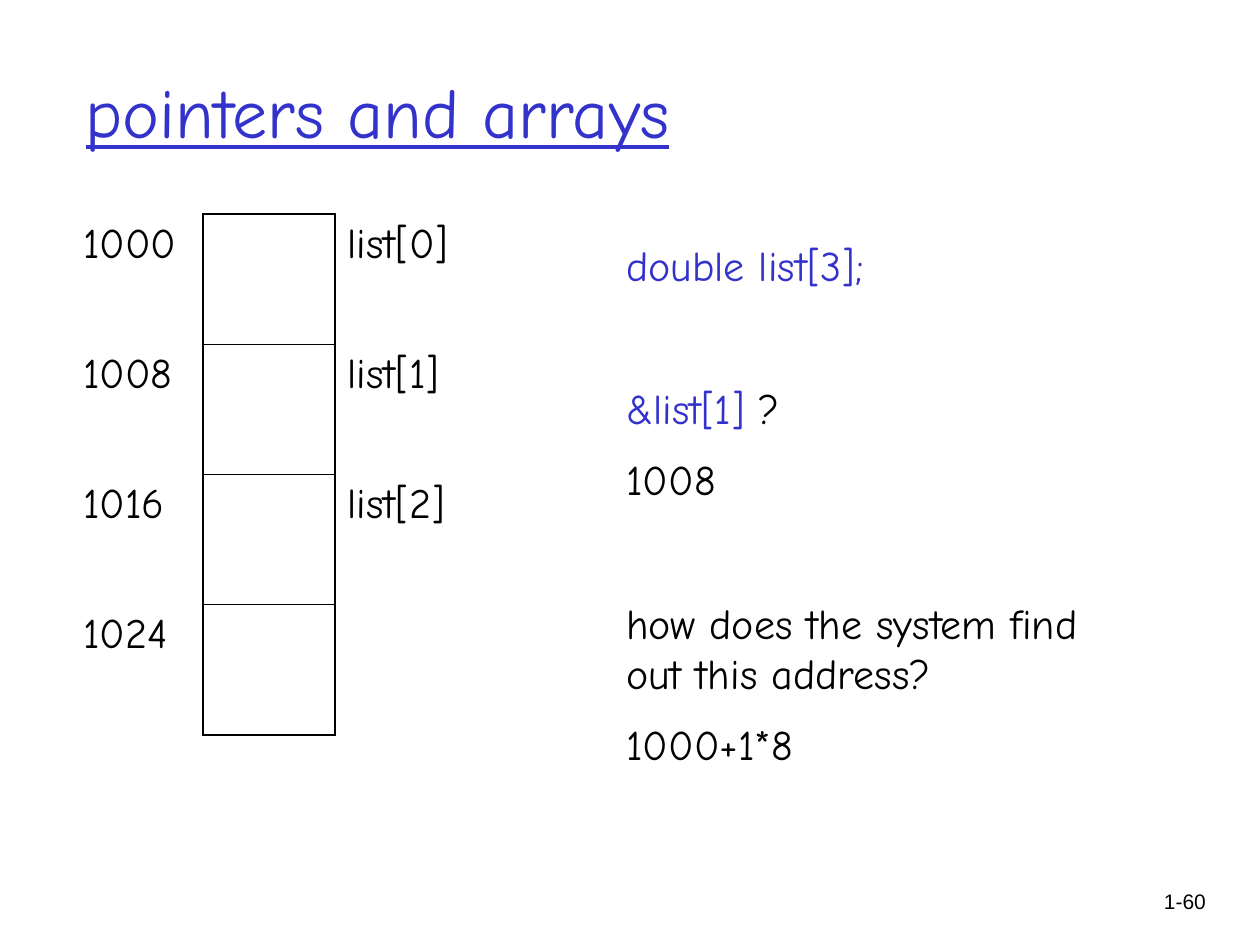
import dataclasses
import typing

import lxml.etree
import pptx
import pptx.dml.color
import pptx.enum.text
import pptx.oxml.ns
import pptx.util

Pt = pptx.util.Pt
Color = pptx.dml.color.RGBColor
Align = pptx.enum.text.PP_ALIGN
Anchor = pptx.enum.text.MSO_ANCHOR


@dataclasses.dataclass(frozen=True)
class Theme:
    """Fonts, type sizes, colours and line width of the slide."""

    font: str = "Comic Neue"
    number_font: str = "Arial"
    title_size: float = 40
    text_size: float = 24
    number_size: float = 12
    accent: str = "3333CC"
    ink: str = "000000"
    border_width: float = 1


@dataclasses.dataclass(frozen=True)
class Box:
    """Position and size in points."""

    left: float
    top: float
    width: float
    height: float

    def lengths(self) -> tuple:
        """Return the four values as lengths."""
        return Pt(self.left), Pt(self.top), Pt(self.width), Pt(self.height)


@dataclasses.dataclass(frozen=True)
class Run:
    """A piece of text in one colour."""

    text: str
    color: str


@dataclasses.dataclass(frozen=True)
class Line:
    """A paragraph of runs and the space above it."""

    runs: tuple[Run, ...]
    space_before: float


@dataclasses.dataclass(frozen=True)
class MemoryCell:
    """An address and the array element stored there."""

    address: str
    element: str


THEME = Theme()
LINE_GAP = 12
TOPIC_GAP = 53
TITLE_BOX = Box(41.76, 18, 612, 90)
TABLE_BOX = Box(40.32, 122.4, 340.56, 297.6)
BODY_BOX = Box(350.64, 133.2, 282.24, 370.8)
NUMBER_BOX = Box(642.96, 504, 53.28, 36)
COLUMN_WIDTHS = (75.6, 75.6, 189.36)
COLUMN_BORDERS = ({"R"}, {"L", "R", "T", "B"}, {"L"})

MEMORY = (
    MemoryCell("1000", "list[0]"),
    MemoryCell("1008", "list[1]"),
    MemoryCell("1016", "list[2]"),
    MemoryCell("1024", ""),
)
LINES = (
    Line((Run("double list[3];", THEME.accent),), 0),
    Line((Run("&list[1]", THEME.accent), Run(" ?", THEME.ink)), TOPIC_GAP),
    Line((Run("1008", THEME.ink),), LINE_GAP),
    Line((Run("how does the system find out this address?", THEME.ink),), TOPIC_GAP),
    Line((Run("1000+1*8", THEME.ink),), LINE_GAP),
)


def add_run(paragraph: typing.Any, run: Run, size: float, font: str = THEME.font) -> typing.Any:
    """Add a formatted run to a paragraph and return it."""
    text_run = paragraph.add_run()
    text_run.text = run.text
    text_run.font.name = font
    text_run.font.size = Pt(size)
    text_run.font.color.rgb = Color.from_string(run.color)
    return text_run


def place(shape: typing.Any, box: Box, anchor: typing.Any) -> typing.Any:
    """Move a text shape, fix its text settings and return its text frame."""
    shape.left, shape.top, shape.width, shape.height = box.lengths()
    frame = shape.text_frame
    frame.word_wrap = True
    frame.auto_size = pptx.enum.text.MSO_AUTO_SIZE.NONE
    frame.vertical_anchor = anchor
    return frame


def set_borders(cell: typing.Any, sides: set[str]) -> None:
    """Draw the named sides of a cell and clear the others."""
    properties = cell._tc.get_or_add_tcPr()
    qn = pptx.oxml.ns.qn
    for side in "LRTB":
        line = lxml.etree.SubElement(properties, qn(f"a:ln{side}"), w=str(Pt(THEME.border_width)))
        if side in sides:
            fill = lxml.etree.SubElement(line, qn("a:solidFill"))
            lxml.etree.SubElement(fill, qn("a:srgbClr"), val=THEME.ink)
        else:
            lxml.etree.SubElement(line, qn("a:noFill"))


def draw_title(slide: typing.Any) -> None:
    """Fill the title placeholder."""
    paragraph = place(slide.shapes.title, TITLE_BOX, Anchor.MIDDLE).paragraphs[0]
    paragraph.alignment = Align.LEFT
    add_run(paragraph, Run("pointers and arrays", THEME.accent), THEME.title_size).font.underline = True


def draw_memory(slide: typing.Any, cells: tuple[MemoryCell, ...]) -> None:
    """Draw the memory table with addresses and element names."""
    table = slide.shapes.add_table(len(cells), len(COLUMN_WIDTHS), *TABLE_BOX.lengths()).table
    table.first_row = False
    table.horz_banding = False
    for column, width in zip(table.columns, COLUMN_WIDTHS):
        column.width = Pt(width)
    for row, memory in enumerate(cells):
        table.rows[row].height = Pt(TABLE_BOX.height / len(cells))
        for column, text in enumerate((memory.address, "", memory.element)):
            cell = table.cell(row, column)
            set_borders(cell, COLUMN_BORDERS[column])
            cell.fill.background()
            if text:
                add_run(cell.text_frame.paragraphs[0], Run(text, THEME.ink), THEME.text_size)


def draw_body(slide: typing.Any, lines: tuple[Line, ...]) -> None:
    """Fill the body placeholder with unbulleted lines."""
    frame = place(slide.placeholders[1], BODY_BOX, Anchor.TOP)
    for index, line in enumerate(lines):
        paragraph = frame.add_paragraph() if index else frame.paragraphs[0]
        paragraph.space_before = Pt(line.space_before)
        properties = paragraph._p.get_or_add_pPr()
        properties.set("marL", "0")
        properties.set("indent", "0")
        lxml.etree.SubElement(properties, pptx.oxml.ns.qn("a:buNone"))
        for run in line.runs:
            add_run(paragraph, run, THEME.text_size)


def draw_number(slide: typing.Any) -> None:
    """Add the page number."""
    shape = slide.shapes.add_textbox(*NUMBER_BOX.lengths())
    paragraph = place(shape, NUMBER_BOX, Anchor.TOP).paragraphs[0]
    paragraph.alignment = Align.RIGHT
    add_run(paragraph, Run("1-60", THEME.ink), THEME.number_size, THEME.number_font)


def main() -> None:
    """Build and save the slide."""
    presentation = pptx.Presentation()
    presentation.slide_width = Pt(720)
    presentation.slide_height = Pt(540)
    slide = presentation.slides.add_slide(presentation.slide_layouts[1])
    draw_title(slide)
    draw_memory(slide, MEMORY)
    draw_body(slide, LINES)
    draw_number(slide)
    presentation.save("out.pptx")


if __name__ == "__main__":
    main()
